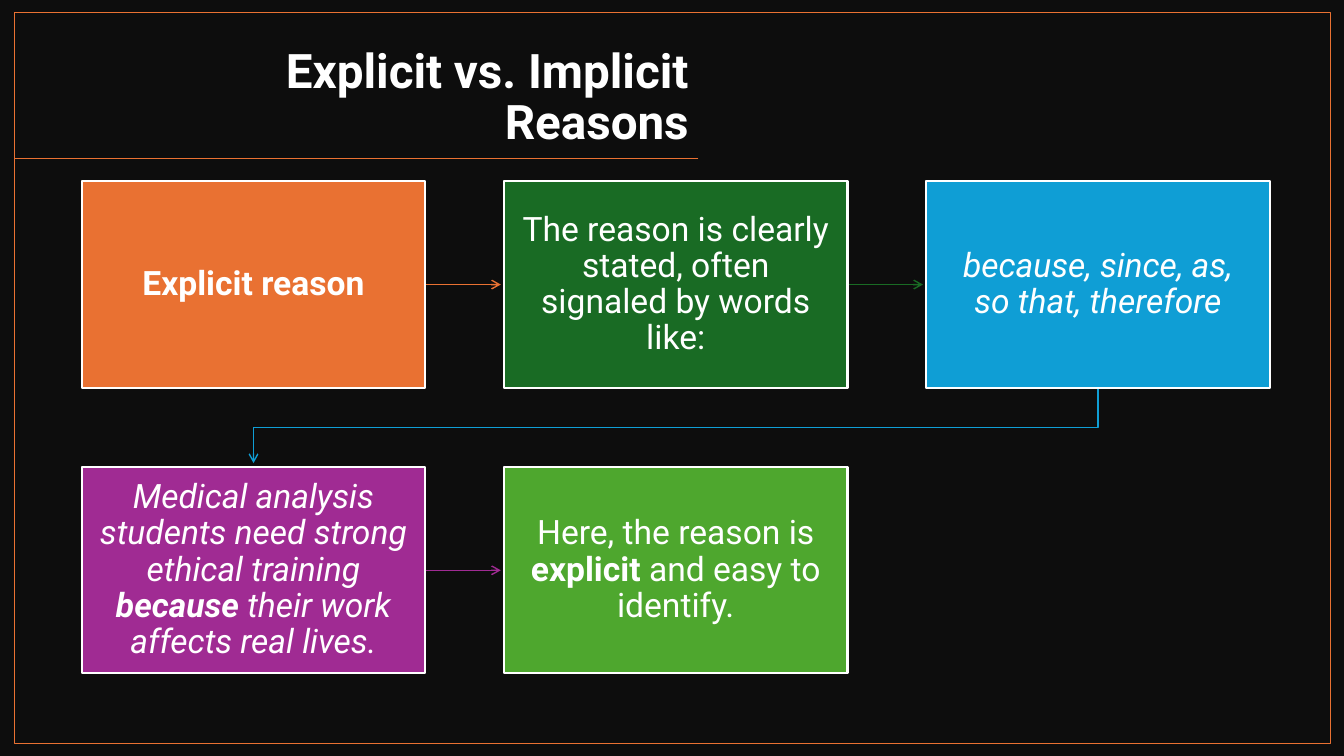
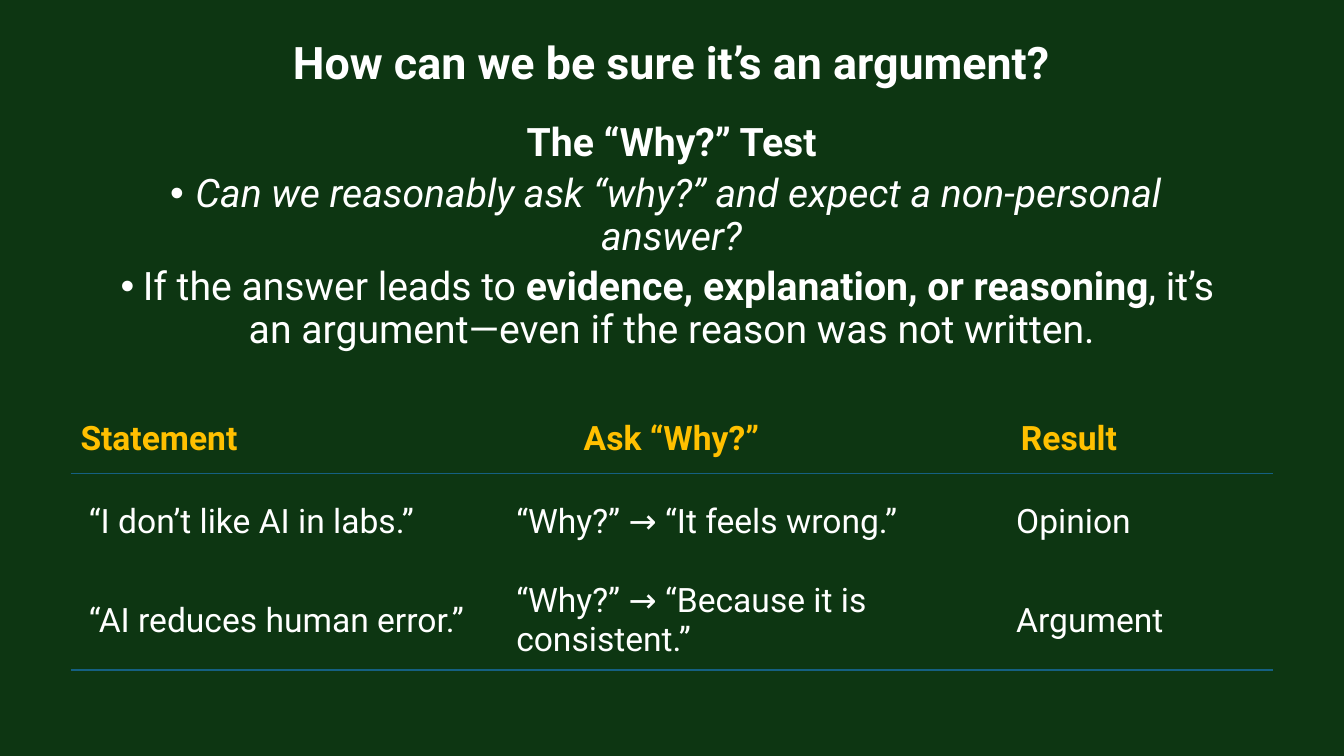
"""Build two slides on explicit reasons and the "Why?" test."""
from dataclasses import dataclass

from lxml import etree
from pptx import Presentation
from pptx.dml.color import RGBColor
from pptx.enum.shapes import MSO_CONNECTOR, MSO_SHAPE
from pptx.enum.text import MSO_ANCHOR, PP_ALIGN
from pptx.oxml.ns import qn
from pptx.util import Cm, Pt

RECTANGLE = MSO_SHAPE.RECTANGLE
STRAIGHT = MSO_CONNECTOR.STRAIGHT
LEFT, CENTER, RIGHT = PP_ALIGN.LEFT, PP_ALIGN.CENTER, PP_ALIGN.RIGHT
TOP, MIDDLE, BOTTOM = MSO_ANCHOR.TOP, MSO_ANCHOR.MIDDLE, MSO_ANCHOR.BOTTOM

FONT = "Roboto"
WHITE, BLACK, DARK_GREEN = "FFFFFF", "0D0D0D", "0D3612"
ORANGE, GREEN, BLUE = "E97132", "196B24", "0F9ED5"
PURPLE, LIME, GOLD, TEAL = "A02B93", "4EA72E", "FFC000", "156082"

STEP_LEFT, STEP_TOP = 2.06, 4.57
STEP_WIDTH, STEP_HEIGHT = 8.66, 5.2
STEP_PITCH_X, STEP_PITCH_Y = 10.64, 7.2
STEPS_PER_ROW = 3
ARROW_LENGTH = 1.9
TABLE_LEFT, TABLE_TOP, ROW_HEIGHT = 1.78, 11.94, 2.45
COLUMN_WIDTHS = (10.77, 12.6, 6.93)
HEADER_TABS = (12.68, 23.7)


@dataclass(frozen=True)
class Run:
    """A piece of text with one style."""
    text: str
    bold: bool = False
    italic: bool = False


@dataclass(frozen=True)
class Block:
    """A paragraph and its layout."""
    runs: tuple[Run, ...]
    size: float
    align: PP_ALIGN = CENTER
    color: str = WHITE
    line_spacing: float = 0.9
    space_after: float = 0
    bullet: bool = False
    tabs: tuple[float, ...] = ()


@dataclass(frozen=True)
class Box:
    """A rectangle on the slide in centimetres."""
    left: float
    top: float
    width: float
    height: float

    def lengths(self) -> tuple[Cm, ...]:
        """Return the box as slide lengths."""
        return Cm(self.left), Cm(self.top), Cm(self.width), Cm(self.height)


@dataclass(frozen=True)
class Step:
    """A coloured box of the flow."""
    color: str
    runs: tuple[Run, ...]


STEPS = (
    Step(ORANGE, (Run("Explicit reason", bold=True),)),
    Step(GREEN, (Run("The reason is clearly stated, often signaled by words like:"),)),
    Step(BLUE, (Run("because, since, as, so that, therefore", italic=True),)),
    Step(PURPLE, (
        Run("Medical analysis students need strong ethical training ", italic=True),
        Run("because", bold=True, italic=True),
        Run(" their work affects real lives.", italic=True))),
    Step(LIME, (
        Run("Here, the reason is "),
        Run("explicit", bold=True),
        Run(" and easy to identify."))),
)

WHY_TEST = (
    Block((Run("The “Why?” Test", bold=True),), 28, space_after=6),
    Block((Run("Can we reasonably ask “why?” and expect a non-personal answer?",
               italic=True),), 28, space_after=6, bullet=True),
    Block((Run("If the answer leads to "),
           Run("evidence, explanation, or reasoning", bold=True),
           Run(", it’s an argument—even if the reason was not written.")),
          28, space_after=6, bullet=True),
)

HEADERS = ("Statement", "Ask “Why?”", "Result")
ROWS = (
    ("“I don’t like AI in labs.”", "“Why?” → “It feels wrong.”", "Opinion"),
    ("“AI reduces human error.”", "“Why?” → “Because it is consistent.”", "Argument"),
)


def rgb(color: str) -> RGBColor:
    """Turn a hex string into a colour."""
    return RGBColor.from_string(color)


def add_child(parent, tag: str, **attributes: str):
    """Append an XML element and return it."""
    return etree.SubElement(parent, qn(tag), attributes)


def write_blocks(frame, blocks: tuple[Block, ...]) -> None:
    """Write paragraphs into a text frame."""
    frame.word_wrap = True
    for index, block in enumerate(blocks):
        paragraph = frame.add_paragraph() if index else frame.paragraphs[0]
        paragraph.alignment = block.align
        paragraph.line_spacing = block.line_spacing
        paragraph.space_after = Pt(block.space_after)
        properties = paragraph._p.get_or_add_pPr()
        if block.bullet:
            properties.set("marL", "0")
            properties.set("indent", str(-Cm(0.64)))
            add_child(properties, "a:buFont", typeface="Arial")
            add_child(properties, "a:buChar", char="•")
        if block.tabs:
            tab_list = add_child(properties, "a:tabLst")
            for position in block.tabs:
                add_child(tab_list, "a:tab", pos=str(Cm(position)), algn="l")
        font = paragraph.font
        font.name, font.size = FONT, Pt(block.size)
        font.color.rgb = rgb(block.color)
        font.bold = all(run.bold for run in block.runs)
        font.italic = all(run.italic for run in block.runs)
        for item in block.runs:
            run = paragraph.add_run()
            run.text = item.text
            if item.bold != font.bold:
                run.font.bold = item.bold
            if item.italic != font.italic:
                run.font.italic = item.italic


def add_text(slide, box: Box, blocks: tuple[Block, ...], anchor: MSO_ANCHOR) -> None:
    """Add a text box."""
    frame = slide.shapes.add_textbox(*box.lengths()).text_frame
    frame.vertical_anchor = anchor
    write_blocks(frame, blocks)


def add_title(slide, text: str, box: Box, size: float, align: PP_ALIGN,
              anchor: MSO_ANCHOR) -> None:
    """Add the bold slide title."""
    add_text(slide, box, (Block((Run(text, bold=True),), size, align),), anchor)


def add_slide(presentation, background: str):
    """Add a blank slide with a plain background."""
    slide = presentation.slides.add_slide(presentation.slide_layouts[6])
    fill = slide.background.fill
    fill.solid()
    fill.fore_color.rgb = rgb(background)
    return slide


def add_rectangle(slide, box: Box, line: str, width: float, fill: str | None = None):
    """Add an outlined rectangle, filled if a colour is given."""
    shape = slide.shapes.add_shape(RECTANGLE, *box.lengths())
    shape.shadow.inherit = False
    if fill:
        shape.fill.solid()
        shape.fill.fore_color.rgb = rgb(fill)
    else:
        shape.fill.background()
    shape.line.color.rgb = rgb(line)
    shape.line.width = Pt(width)
    return shape


def add_line(slide, points: tuple[tuple[float, float], ...], color: str,
             arrow: bool = True) -> None:
    """Draw a straight connector or a bent line through the points."""
    places = [(Cm(x), Cm(y)) for x, y in points]
    if len(places) == 2:
        shape = slide.shapes.add_connector(STRAIGHT, *places[0], *places[1])
        add_child(shape._element.spPr, "a:effectLst")
    else:
        builder = slide.shapes.build_freeform(*places[0])
        builder.add_line_segments(places[1:], close=False)
        shape = builder.convert_to_shape()
        shape.shadow.inherit = False
        shape.fill.background()
    shape.line.color.rgb = rgb(color)
    shape.line.width = Pt(1)
    if arrow:
        add_child(shape.line._get_or_add_ln(), "a:tailEnd", type="arrow")


def step_box(index: int) -> Box:
    """Return the place of a step in the grid."""
    row, column = divmod(index, STEPS_PER_ROW)
    return Box(STEP_LEFT + column * STEP_PITCH_X, STEP_TOP + row * STEP_PITCH_Y,
               STEP_WIDTH, STEP_HEIGHT)


def add_step_arrow(slide, index: int) -> None:
    """Draw the arrow from a step to the next one."""
    start, end = step_box(index), step_box(index + 1)
    if start.top == end.top:
        right, middle = start.left + start.width, start.top + start.height / 2
        points = ((right, middle), (right + ARROW_LENGTH, middle))
    else:
        start_x, end_x = start.left + start.width / 2, end.left + end.width / 2
        bottom = start.top + start.height
        bend = (bottom + end.top) / 2
        points = ((start_x, bottom), (start_x, bend), (end_x, bend),
                  (end_x, bottom + ARROW_LENGTH))
    add_line(slide, points, STEPS[index].color)


def set_borders(cell, colors: dict[str, str]) -> None:
    """Draw the given cell borders and hide the others."""
    properties = cell._tc.get_or_add_tcPr()
    for side in ("L", "R", "T", "B"):
        border = add_child(properties, f"a:ln{side}", w=str(Pt(1)))
        if side in colors:
            fill = add_child(border, "a:solidFill")
            add_child(fill, "a:srgbClr", val=colors[side])
        else:
            add_child(border, "a:noFill")


def add_answer_table(slide) -> None:
    """Add the table of statements and results."""
    box = Box(TABLE_LEFT, TABLE_TOP, sum(COLUMN_WIDTHS), ROW_HEIGHT * len(ROWS))
    table = slide.shapes.add_table(len(ROWS), len(COLUMN_WIDTHS), *box.lengths()).table
    table.first_row = table.horz_banding = False
    for column, width in zip(table.columns, COLUMN_WIDTHS):
        column.width = Cm(width)
    for row_index, texts in enumerate(ROWS):
        table.rows[row_index].height = Cm(ROW_HEIGHT)
        borders = {"B": TEAL} if row_index == len(ROWS) - 1 else {}
        if row_index == 0:
            borders["T"] = TEAL
        for column_index, text in enumerate(texts):
            cell = table.cell(row_index, column_index)
            cell.vertical_anchor = MIDDLE
            cell.margin_left = cell.margin_right = Cm(0.46)
            cell.margin_top = cell.margin_bottom = Cm(0.23)
            set_borders(cell, borders)
            cell.fill.background()
            write_blocks(cell.text_frame, (Block((Run(text),), 24, LEFT, line_spacing=1.0),))


def build_reasons_slide(presentation) -> None:
    """Build the flow about explicit reasons."""
    slide = add_slide(presentation, BLACK)
    add_title(slide, "Explicit vs. Implicit Reasons", Box(2.34, 1.07, 15.27, 2.84),
              34, RIGHT, BOTTOM)
    add_line(slide, ((17.6, 4), (0.36, 4)), ORANGE, arrow=False)
    add_rectangle(slide, Box(0.36, 0.32, 33.17, 18.42), ORANGE, 1)
    for index, step in enumerate(STEPS):
        if index < len(STEPS) - 1:
            add_step_arrow(slide, index)
        frame = add_rectangle(slide, step_box(index), WHITE, 1.5, step.color).text_frame
        frame.vertical_anchor = MIDDLE
        frame.margin_left = frame.margin_right = Cm(0.43)
        frame.margin_top = frame.margin_bottom = Cm(0.46)
        write_blocks(frame, (Block(step.runs, 24),))


def build_test_slide(presentation) -> None:
    """Build the slide about the "Why?" test."""
    slide = add_slide(presentation, DARK_GREEN)
    add_title(slide, "How can we be sure it’s an argument?", Box(2.79, 0.48, 28.27, 2.34),
              32, CENTER, MIDDLE)
    add_text(slide, Box(2.79, 3.15, 28.27, 5.66), WHY_TEST, MIDDLE)
    add_answer_table(slide)
    header = Block((Run("\t".join(HEADERS), bold=True),), 24, LEFT, GOLD, 1.0,
                   tabs=HEADER_TABS)
    add_text(slide, Box(TABLE_LEFT, 10.39, 28.27, 1.27), (header,), TOP)


def main() -> None:
    """Build and save the presentation."""
    presentation = Presentation()
    presentation.slide_width, presentation.slide_height = Cm(33.87), Cm(19.05)
    build_reasons_slide(presentation)
    build_test_slide(presentation)
    presentation.save("out.pptx")


if __name__ == "__main__":
    main()
